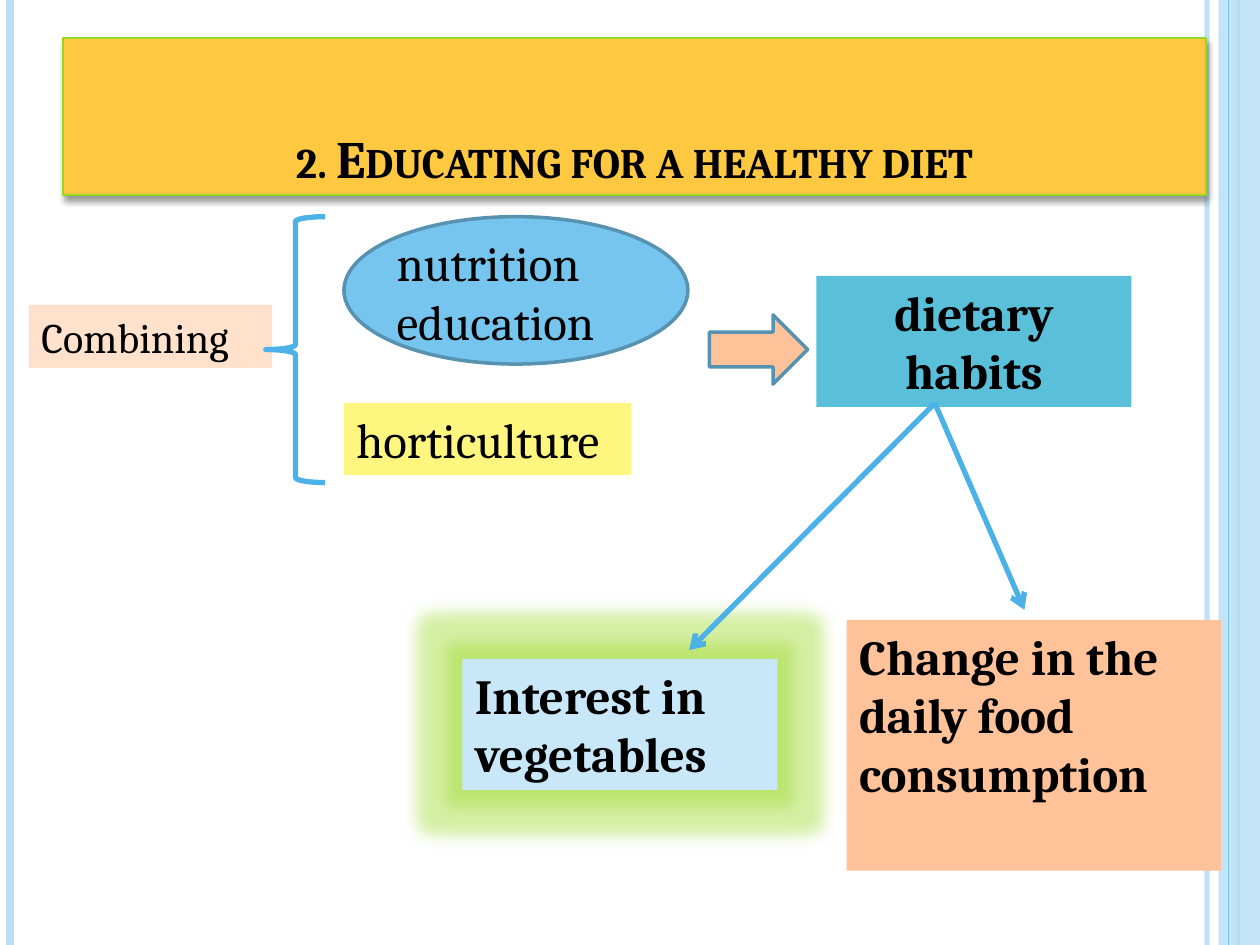
from pptx import Presentation, util as u
from pptx.dml import color
from pptx.enum import shapes as sh, text as tx
from pptx.oxml import parse_xml, ns

THEME = dict(
    font="Cambria", ink="000000", big=30, mid=28, small=24,
    gold="FEC840", green="96D81F", pale="BDDFF6", sky="76C5EF", edge="5792B1",
    blue="4BB1E7", teal="5ABFD9", ice="C8E8F9", peach="FFC299", cream="FFE1CC",
    lemon="FFF67F",
)
WIDE, HIGH = 10, 7.5

# Content; every place is in percent of the slide: left, top, width, height
RAILS = [  # x, colour, points, opacity
    (95.8, "pale", 3, 93), (0.8, "pale", 4.5, 100), (98.3, "sky", 1.5, 100),
]
BAND = (96.7, 0, 3.3, 100)
SEAM = (97.5, "sky", 0.75, 100)
TITLE = ("2. Educating for a healthy diet", (5, 4, 90.7, 16.67))
OVAL = (27.3, 22.93, 27.3, 15.6)
LABEL = ("nutrition education", (30.5, 24, 25, 13.87))
START = ("Combining", (2.3, 32.27, 19.3, 6.67))
GARDEN = ("horticulture", (27.3, 42.67, 22.8, 7.6))
BOXES = [  # text, place, fill, alignment
    ("dietary habits", (64.8, 29.2, 25, 13.87), "teal", "CENTER"),
    ("Interest in vegetables", (36.7, 69.73, 25, 13.87), "ice", "LEFT"),
    ("Change in the daily food consumption", (67.2, 65.6, 29.7, 26.53),
     "peach", "LEFT"),
]
FORK = (74.2, 42.67)
TIPS = [(54.7, 68.8), (81.3, 64.53)]
BRACE = (21.1, 22.93, 4.7, 28.13)
ARROW = (56.3, 33.33, 7.8, 7.33)

deck = Presentation()
deck.slide_width, deck.slide_height = u.Inches(WIDE), u.Inches(HIGH)
page = deck.slides.add_slide(deck.slide_layouts[6])


def scale(place):
    """Turn percent pairs (x, y, ...) into slide lengths."""
    return [u.Inches(v / 100 * (HIGH if i % 2 else WIDE))
            for i, v in enumerate(place)]


def hue(name):
    return color.RGBColor.from_string(THEME[name])


def node(tag, body="", **attrs):
    pairs = "".join(f' {key}="{val}"' for key, val in attrs.items())
    return parse_xml(f'<a:{tag} {ns.nsdecls("a")}{pairs}>{body}</a:{tag}>')


def tint(name, share):
    return (f'<a:srgbClr val="{THEME[name]}">'
            f'<a:alpha val="{share * 1000}"/></a:srgbClr>')


def fade(fill, share):
    """Set the opacity of a solid fill."""
    fill._xPr.find(".//" + ns.qn("a:srgbClr")).append(
        node("alpha", val=share * 1000))


def effect(shape, body):
    spot = shape._element.spPr
    for old in spot.findall(ns.qn("a:effectLst")):
        spot.remove(old)
    spot.append(node("effectLst", body))


def draw(kind, place, fill=None, line=None, weight=1):
    shape = page.shapes.add_shape(
        getattr(sh.MSO_SHAPE, kind), *scale(place))
    shape.shadow.inherit = False
    if fill:
        shape.fill.solid()
        shape.fill.fore_color.rgb = hue(fill)
    else:
        shape.fill.background()
    if line:
        shape.line.color.rgb = hue(line)
        shape.line.width = u.Pt(weight)
    else:
        shape.line.fill.background()
    return shape


def write(shape, words, size="mid", bold=False, align="LEFT", anchor="TOP",
          wrap=True, caps=False):
    frame = shape.text_frame
    frame.word_wrap = wrap
    frame.vertical_anchor = getattr(tx.MSO_ANCHOR, anchor)
    para = frame.paragraphs[0]
    para.alignment = getattr(tx.PP_ALIGN, align)
    run = para.add_run()
    run.text = words
    font = run.font
    font.name, font.size, font.bold = THEME["font"], u.Pt(THEME[size]), bold
    font.color.rgb = hue("ink")
    if caps:
        font._element.set("cap", "small")
    return shape


def join(start, end, tone, weight, share=100, head=False):
    wire = page.shapes.add_connector(
        sh.MSO_CONNECTOR.STRAIGHT, *scale(start + end))
    wire.line.color.rgb = hue(tone)
    wire.line.width = u.Pt(weight)
    if share < 100:
        fade(wire.line.fill, share)
    if head:
        wire.line._get_or_add_ln().append(node("tailEnd", type="arrow"))
    effect(wire, "")


def rail(x, tone, weight, share):
    join((x, 0), (x, 100), tone, weight, share)


# Side rails and band
for item in RAILS:
    rail(*item)
fade(draw("RECTANGLE", BAND, "pale").fill, 87)
rail(*SEAM)

# Title bar with its shadow
words, place = TITLE
bar = draw("RECTANGLE", place, "gold", "green")
write(bar, words, size="big", bold=True, align="CENTER", anchor="BOTTOM",
      caps=True)
effect(bar, f'<a:outerShdw blurRad="{u.Pt(4)}" dist="{u.Pt(2)}" dir="5400000" '
            f'rotWithShape="0">{tint("ink", 40)}</a:outerShdw>')

# What is combined
words, place = START
write(draw("RECTANGLE", place, "cream"), words, size="small")
oval = draw("OVAL", OVAL, "sky", "edge", 2)
words, place = LABEL
label = write(page.shapes.add_textbox(*scale(place)), words)
page.shapes.add_group_shape([oval, label])
words, place = GARDEN
write(draw("RECTANGLE", place, "lemon"), words, wrap=False)

# Habits and the two results
for words, place, fill, align in BOXES:
    box = write(draw("RECTANGLE", place, fill), words, bold=True, align=align)
    if fill == "ice":
        effect(box, f'<a:glow rad="{u.Pt(18)}">{tint("green", 40)}</a:glow>')

# Links
for tip in TIPS:
    join(FORK, tip, "blue", 3, head=True)
draw("LEFT_BRACE", BRACE, line="blue", weight=3)
draw("RIGHT_ARROW", ARROW, "peach", "edge", 2)

deck.save("out.pptx")
